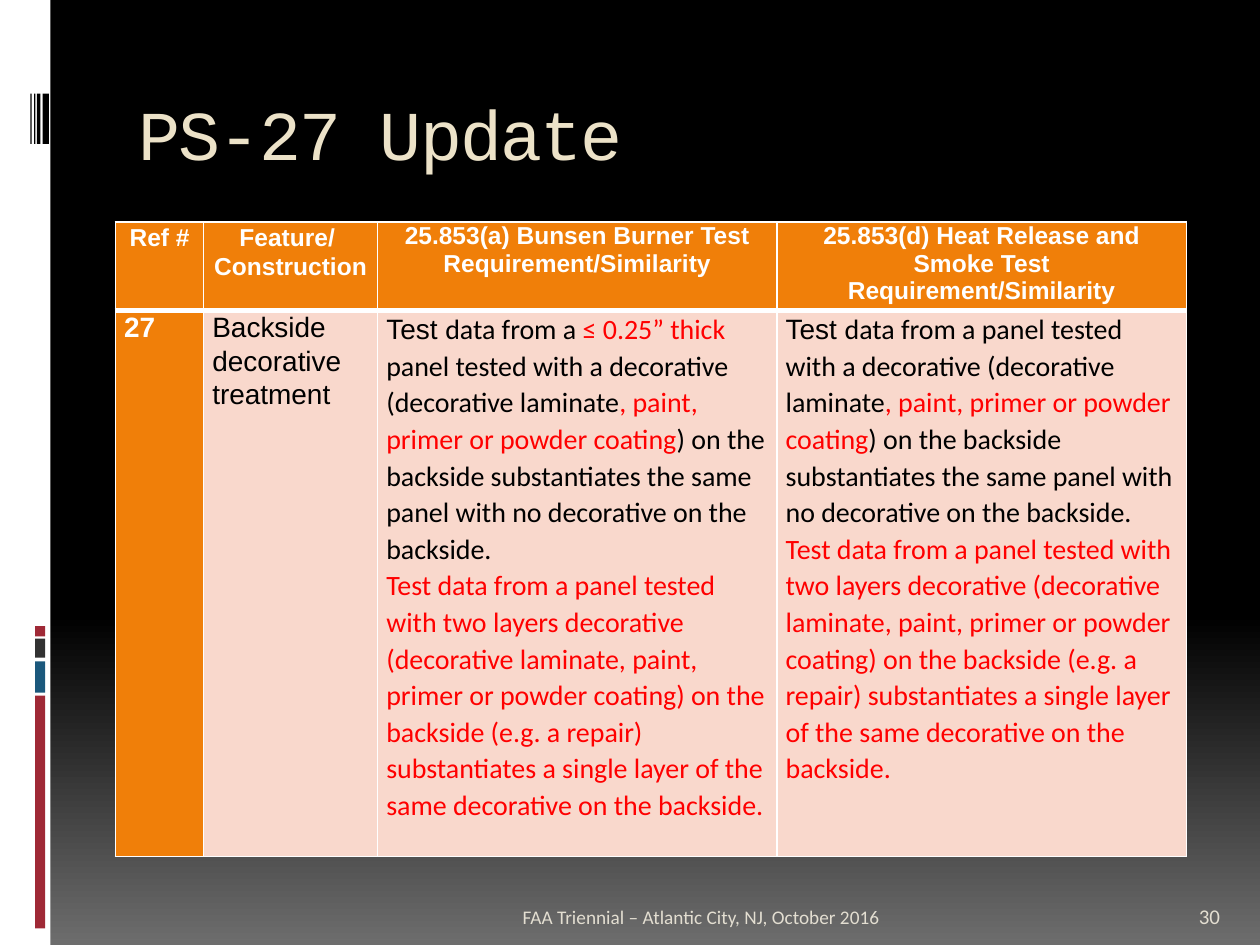
from copy import deepcopy

from pptx import Presentation
from pptx.dml.color import RGBColor
from pptx.enum import shapes, text
from pptx.oxml import ns, parse_xml
from pptx.util import Pt

WHITE, BLACK, RED = "FFFFFF", "000000", "FF0000"
ORANGE, PINK = "F07F09", "F9D8CC"
CREAM, SAND = "ECE2C8", "E3DED1"
CRIMSON, GREY, BLUE = "9F2936", "323232", "1B587C"
LEFT, MID, RIGHT = text.PP_ALIGN.LEFT, text.PP_ALIGN.CENTER, text.PP_ALIGN.RIGHT

BARS = [  # left, top, width, height, colour
    (0, 0, 28.8, 540, WHITE),
    (20, 397.5, 5.8, 133, CRIMSON),
    (20, 378, 5.8, 17.8, BLUE),
    (20, 365, 5.8, 10.8, GREY),
    (20, 357.8, 5.8, 5.8, CRIMSON),
    (24.4, 53.5, 3.6, 28.8, BLACK),
    (21.1, 53.5, 2, 28.8, BLACK),
    (19.5, 53.5, 0.8, 28.8, BLACK),
    (17.4, 53.5, 0.8, 28.8, BLACK),
]
COLS = [50.4, 99.4, 228.2, 234]
ROWS = [47, 312]
HEADS = [
    ("Ref #", 1.07),
    ("Feature/ \vConstruction", 1.07),
    ("25.853(a) Bunsen Burner Test Requirement/Similarity", None),
    ("25.853(d) Heat Release and Smoke Test Requirement/Similarity", None),
]
COATS = (", paint, primer or powder coating", RED)
SAME = (") on the backside substantiates the same panel with no decorative "
        "on the backside.", BLACK)
TWO = [("Test data from a panel tested with two layers decorative (decorative "
        "laminate, paint, primer or powder coating) on the backside (e.g. a "
        "repair) substantiates a single layer of the same decorative on the "
        "backside.", RED)]
BURN = [("Test ", BLACK, "Arial"), ("data from a ", BLACK),
        ("≤ 0.25” thick ", RED),
        ("panel tested with a decorative (decorative laminate", BLACK),
        COATS, SAME]
HEAT = [("Test ", BLACK, "Arial"),
        ("data from a panel tested with a decorative (decorative laminate",
         BLACK), COATS, SAME]


def rgb(code):
    return RGBColor.from_string(code)


def style(run, size, color, font="Calibri", bold=False):
    run.font.size, run.font.name, run.font.bold = Pt(size), font, bold
    run.font.color.rgb = rgb(color)


def back(slide):
    """Black for the upper part, fading to grey at the foot."""
    fill = slide.background.fill
    fill.gradient()
    fill.gradient_angle = 270
    first = next(slide.element.iter(ns.qn("a:gs")))
    first.addnext(deepcopy(first))
    stops = [(0, BLACK), (0.65, BLACK), (1, "6D6D6D")]
    for stop, (pos, color) in zip(fill.gradient_stops, stops):
        stop.position = pos
        stop.color.rgb = rgb(color)


def bar(slide, left, top, width, height, color):
    rect = slide.shapes.add_shape(shapes.MSO_SHAPE.RECTANGLE, Pt(left),
                                  Pt(top), Pt(width), Pt(height))
    rect.shadow.inherit = False
    rect.fill.solid()
    rect.fill.fore_color.rgb = rgb(color)
    rect.line.fill.background()


def label(slide, area, words, anchor, align, size, color, font="Calibri"):
    frame = slide.shapes.add_textbox(*map(Pt, area)).text_frame
    frame.word_wrap = True
    frame.vertical_anchor = anchor
    frame.text = words
    para = frame.paragraphs[0]
    para.alignment = align
    style(para.runs[0], size, color, font)
    return para.runs[0]


def edge(cell, side, width):
    cell._tc.get_or_add_tcPr().append(parse_xml(
        f'<a:ln{side} {ns.nsdecls("a")} w="{Pt(width)}"><a:solidFill>'
        f'<a:srgbClr val="{WHITE}"/></a:solidFill></a:ln{side}>'))


def box(cell, color, thick):
    """Set the margins, borders and fill; thick is the side with a wide line."""
    cell.margin_left = cell.margin_right = Pt(5)
    cell.margin_top = cell.margin_bottom = 0
    for side in "LRTB":
        edge(cell, side, 3 if side == thick else 1)
    cell.fill.solid()
    cell.fill.fore_color.rgb = rgb(color)


def line(cell, words, size, color, bold, align=LEFT, space=1.07):
    """Fill a cell with one Arial paragraph."""
    cell.text = words
    para = cell.text_frame.paragraphs[0]
    para.alignment, para.line_spacing = align, space
    for run in para.runs:
        style(run, size, color, "Arial", bold)


def mixed(cell, paras):
    """Fill a cell with paragraphs of (words, colour[, font]) runs."""
    frame = cell.text_frame
    for i, parts in enumerate(paras):
        para = frame.add_paragraph() if i else frame.paragraphs[0]
        para.line_spacing = 1.07
        for words, *look in parts:
            run = para.add_run()
            run.text = words
            style(run, 16, *look)


def grid(slide):
    table = slide.shapes.add_table(2, 4, Pt(66), Pt(127), Pt(sum(COLS)),
                                   Pt(sum(ROWS))).table
    for col, width in zip(table.columns, COLS):
        col.width = Pt(width)
    for row, height in zip(table.rows, ROWS):
        row.height = Pt(height)
    for i, (words, space) in enumerate(HEADS):
        head, body = table.cell(0, i), table.cell(1, i)
        box(head, ORANGE, "B")
        box(body, PINK if i else ORANGE, "T")
        line(head, words, 14, WHITE, True, MID, space)
    line(table.cell(1, 0), "27", 16, WHITE, True)
    line(table.cell(1, 1), "Backside decorative treatment", 16, BLACK, False)
    mixed(table.cell(1, 2), [BURN, TWO])
    mixed(table.cell(1, 3), [HEAT, TWO])


def main():
    deck = Presentation()
    deck.slide_width, deck.slide_height = Pt(720), Pt(540)
    slide = deck.slides.add_slide(deck.slide_layouts[6])
    back(slide)
    for item in BARS:
        bar(slide, *item)
    title = label(slide, (72, 40, 612, 72), "PS-27 Update",
                  text.MSO_ANCHOR.MIDDLE, LEFT, 40, CREAM, "Courier New")
    title.font._element.set("spc", "-100")
    grid(slide)
    foot = text.MSO_ANCHOR.BOTTOM
    label(slide, (72, 505.5, 437.8, 28.8),
          "FAA Triennial – Atlantic City, NJ, October 2016",
          foot, RIGHT, 11, SAND)
    label(slide, (678, 505.5, 36, 28.8), "30", foot, LEFT, 12, SAND)
    deck.save("out.pptx")


if __name__ == "__main__":
    main()
